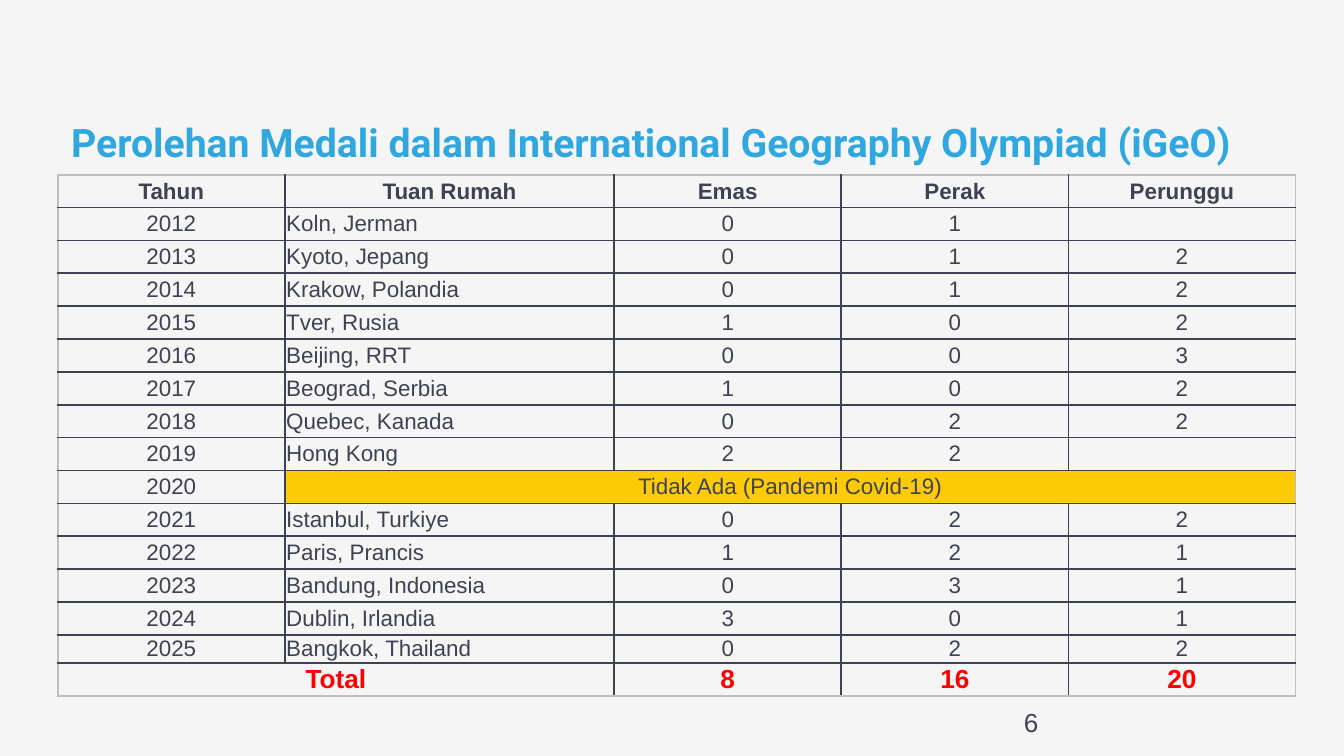
from lxml import etree
from pptx import Presentation
from pptx.dml.color import RGBColor
from pptx.enum.text import MSO_ANCHOR, PP_ALIGN
from pptx.oxml.ns import qn
from pptx.util import Inches, Pt

LEFT, CENTER = PP_ALIGN.LEFT, PP_ALIGN.CENTER
MIDDLE = MSO_ANCHOR.MIDDLE

TITLE = "Perolehan Medali dalam International Geography Olympiad (iGeO)"
PAGE_NUMBER = "6"
HEADER = ("Tahun", "Tuan Rumah", "Emas", "Perak", "Perunggu")
RESULTS = [
    ("2012", "Koln, Jerman", "0", "1", ""),
    ("2013", "Kyoto, Jepang", "0", "1", "2"),
    ("2014", "Krakow, Polandia", "0", "1", "2"),
    ("2015", "Tver, Rusia", "1", "0", "2"),
    ("2016", "Beijing, RRT", "0", "0", "3"),
    ("2017", "Beograd, Serbia", "1", "0", "2"),
    ("2018", "Quebec, Kanada", "0", "2", "2"),
    ("2019", "Hong Kong", "2", "2", ""),
    ("2020", "Tidak Ada (Pandemi Covid-19)", "", "", ""),
    ("2021", "Istanbul, Turkiye", "0", "2", "2"),
    ("2022", "Paris, Prancis", "1", "2", "1"),
    ("2023", "Bandung, Indonesia", "0", "3", "1"),
    ("2024", "Dublin, Irlandia", "3", "0", "1"),
    ("2025", "Bangkok, Thailand", "0", "2", "2"),
]
TOTAL = ("Total", "", "8", "16", "20")
ROWS = [HEADER, *RESULTS, TOTAL]
LAST_ROW, LAST_COLUMN = len(ROWS) - 1, len(HEADER) - 1
CANCELLED_ROW = [row[0] for row in ROWS].index("2020")

INK, GRID_EDGE, GOLD = "3F4252", "BFBFBF", "FFCB07"
TITLE_FONT = {"name": "Roboto", "size": Pt(21), "bold": True, "color": "31A7DF"}
BODY_FONT = {"name": "Arial", "size": Pt(12), "bold": False, "color": INK}
HEADER_FONT = {**BODY_FONT, "bold": True}
TOTAL_FONT = {**HEADER_FONT, "size": Pt(14), "color": "FF0000"}
NUMBER_FONT = {**BODY_FONT, "size": Pt(14)}
CELL_FORMAT = {
    "vertical_anchor": MIDDLE,
    "margin_left": Inches(0.01),
    "margin_right": Inches(0.01),
    "margin_top": 0,
    "margin_bottom": 0,
}

SLIDE_WIDTH = 10
SLIDE_HEIGHT = SLIDE_WIDTH * 9 / 16
TABLE_LEFT, TABLE_TOP, TABLE_WIDTH, TABLE_HEIGHT = 0.43, 1.3, 9.21, 3.88
HOST_WIDTH, SHORT_HEIGHT = 2.45, 0.21
SHORT_ROW = LAST_ROW - 1
COLUMN_WIDTH = (TABLE_WIDTH - HOST_WIDTH) / LAST_COLUMN
ROW_HEIGHT = (TABLE_HEIGHT - SHORT_HEIGHT) / LAST_ROW


def rgb(value):
    return RGBColor.from_string(value)


def write(text_frame, text, formats, alignment=LEFT):
    paragraph = text_frame.paragraphs[0]
    paragraph.alignment = alignment
    if not text:
        size = str(int(formats["size"].pt * 100))
        etree.SubElement(paragraph._p, qn("a:endParaRPr"), sz=size)
        return
    run = paragraph.add_run()
    run.text = text
    for name, value in formats.items():
        if name == "color":
            run.font.color.rgb = rgb(value)
        else:
            setattr(run.font, name, value)


def add_borders(cell, row, column):
    last_spanned = column + cell.span_width - 1 if cell.is_merge_origin else column
    outer = {
        "a:lnL": column == 0,
        "a:lnR": last_spanned == LAST_COLUMN,
        "a:lnT": row == 0,
        "a:lnB": row == LAST_ROW,
    }
    properties = cell._tc.get_or_add_tcPr()
    for tag, is_outer in outer.items():
        line = etree.SubElement(properties, qn(tag), w=str(Pt(1)))
        fill = etree.SubElement(line, qn("a:solidFill"))
        color = GRID_EDGE if is_outer else INK
        etree.SubElement(fill, qn("a:srgbClr"), val=color)


def add_medal_table(slide):
    box = [Inches(n) for n in (TABLE_LEFT, TABLE_TOP, TABLE_WIDTH, TABLE_HEIGHT)]
    table = slide.shapes.add_table(len(ROWS), len(HEADER), *box).table
    for index, column in enumerate(table.columns):
        column.width = Inches(HOST_WIDTH if index == 1 else COLUMN_WIDTH)
    for index, row in enumerate(table.rows):
        row.height = Inches(SHORT_HEIGHT if index == SHORT_ROW else ROW_HEIGHT)
    table.cell(CANCELLED_ROW, 1).merge(table.cell(CANCELLED_ROW, LAST_COLUMN))
    table.cell(LAST_ROW, 0).merge(table.cell(LAST_ROW, 1))

    row_fonts = {0: HEADER_FONT, LAST_ROW: TOTAL_FONT}
    for row, texts in enumerate(ROWS):
        for column, text in enumerate(texts):
            cell = table.cell(row, column)
            for name, value in CELL_FORMAT.items():
                setattr(cell, name, value)
            add_borders(cell, row, column)
            if row == CANCELLED_ROW and column > 0:
                cell.fill.solid()
                cell.fill.fore_color.rgb = rgb(GOLD)
            else:
                cell.fill.background()
            is_host = column == 1 and row not in (0, CANCELLED_ROW, LAST_ROW)
            alignment = LEFT if is_host else CENTER
            write(cell.text_frame, text, row_fonts.get(row, BODY_FONT), alignment)


def main():
    presentation = Presentation()
    presentation.slide_width = Inches(SLIDE_WIDTH)
    presentation.slide_height = Inches(SLIDE_HEIGHT)
    slide = presentation.slides.add_slide(presentation.slide_layouts[5])
    slide.background.fill.solid()
    slide.background.fill.fore_color.rgb = rgb("F5F5F5")

    title = slide.shapes.title
    title.left, title.top = Inches(TABLE_LEFT), Inches(0.78)
    title.width, title.height = Inches(9.36), Inches(0.52)
    title.text_frame.vertical_anchor = MSO_ANCHOR.TOP
    for side in ("left", "right", "top", "bottom"):
        setattr(title.text_frame, f"margin_{side}", Inches(0.1))
    write(title.text_frame, TITLE, TITLE_FONT)

    add_medal_table(slide)

    number_box = [Inches(n) for n in (7.52, 5.21, 2.25, 0.3)]
    number = slide.shapes.add_textbox(*number_box)
    number.text_frame.word_wrap = True
    write(number.text_frame, PAGE_NUMBER, NUMBER_FONT)

    presentation.save("out.pptx")


if __name__ == "__main__":
    main()
